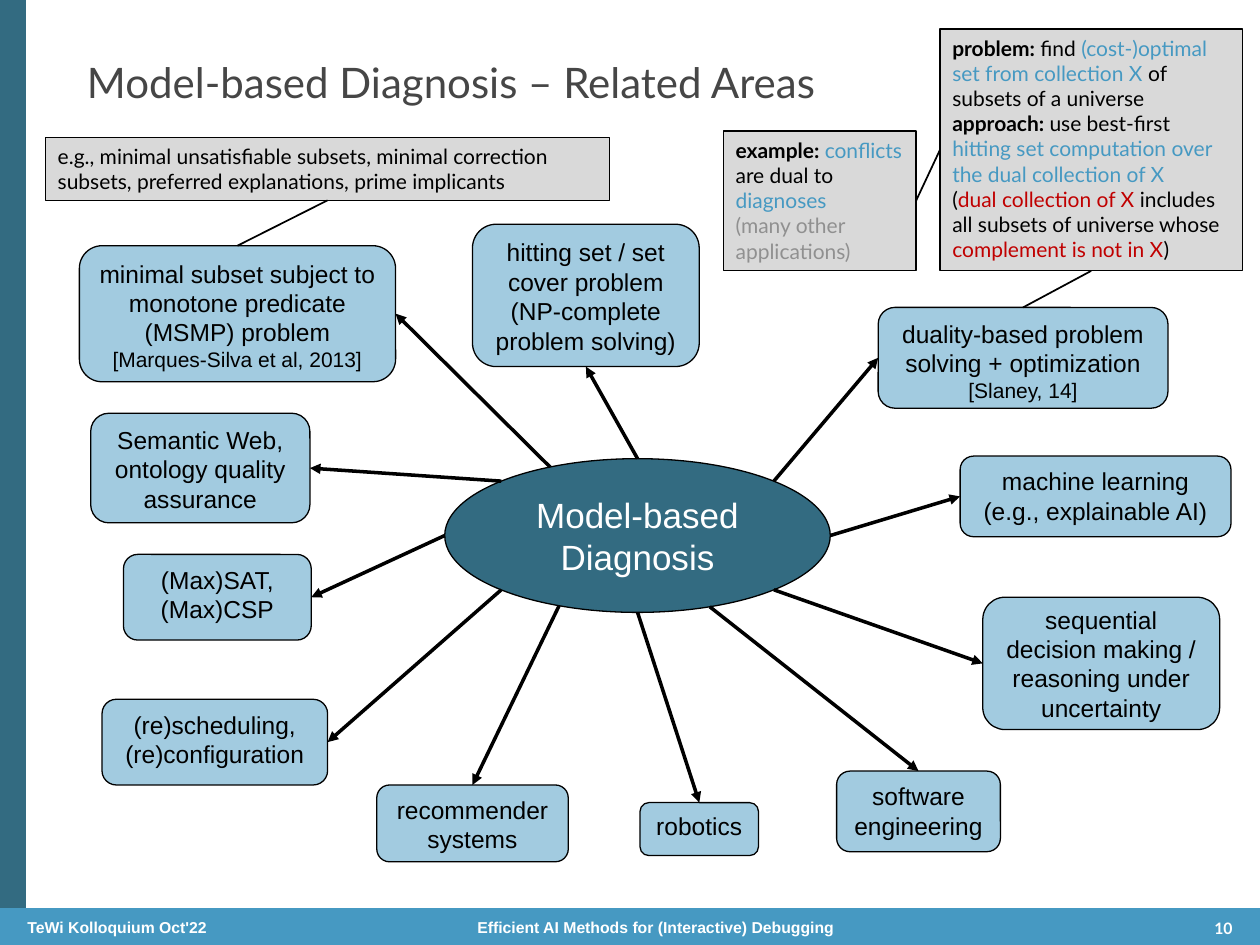
"""Build the slide on areas related to model-based diagnosis."""
import math

import lxml.etree
import pptx
import pptx.dml.color
import pptx.enum.shapes
import pptx.enum.text
import pptx.oxml.ns
import pptx.util

Inches = pptx.util.Inches
Pt = pptx.util.Pt
SHAPE = pptx.enum.shapes.MSO_SHAPE
ALIGN = pptx.enum.text.PP_ALIGN
ANCHOR = pptx.enum.text.MSO_ANCHOR
TOP, LEFT, BOTTOM, RIGHT = range(4)

BLACK, WHITE, GREY = "000000", "FFFFFF", "D9D9D9"
TEAL, BLUE, RED = "336B81", "4699C2", "C00000"
CITATION = {"size": 12}
BOLD = {"bold": True}
KEY = {"color": BLUE}
DUAL = {"color": RED}

TITLE = "Model-based Diagnosis – Related Areas"
FOOTER = "TeWi Kolloquium Oct'22\tEfficient AI Methods for (Interactive) Debugging"
FOOTER_TAB = 3.57
PAGE = "10"
HUB = (3.53, 3.64, 3.06, 1.22)
BARS = [((0, 0, 0.2, 7.5), TEAL), ((0, 7.21, 10, 0.29), BLUE)]

# name: (box, paragraphs, side joined, angle on the hub in degrees)
AREAS = {
    "subsets": ((0.63, 1.95, 2.51, 1.08),
                [["minimal subset subject to monotone predicate (MSMP) problem ",
                  ("[Marques-Silva et al, 2013]", CITATION)]], RIGHT, 243),
    "hitting": ((3.75, 1.78, 1.8, 1.13),
                [["hitting set / set cover problem"],
                 ["(NP-complete problem solving)"]], BOTTOM, 270),
    "web": ((0.72, 3.28, 1.74, 0.87),
            [["Semantic Web,"], ["ontology quality assurance"]], RIGHT, 225),
    "duality": ((6.97, 2.44, 2.3, 0.8),
                [["duality-based problem solving + optimization ",
                  ("[Slaney, 14]", CITATION)]], LEFT, 315),
    "sequential": ((7.8, 4.74, 1.88, 1.05),
                   [["sequential decision making / reasoning under uncertainty"]],
                   LEFT, 45),
    "learning": ((7.62, 3.62, 2.15, 0.64),
                 [["machine learning"], ["(e.g., explainable AI)"]], LEFT, 0),
    "sat": ((0.98, 4.4, 1.49, 0.68), [["(Max)SAT,"], ["(Max)CSP"]], RIGHT, 180),
    "scheduling": ((0.81, 5.55, 1.79, 0.68),
                   [["(re)scheduling,"], ["(re)configuration"]], RIGHT, 135),
    "recommender": ((2.99, 6.23, 1.52, 0.61), [["recommender systems"]], TOP, 114),
    "robotics": ((5.08, 6.37, 0.94, 0.42), [["robotics"]], TOP, 90),
    "software": ((6.64, 6.12, 1.3, 0.64), [["software engineering"]], TOP, 68),
}

NOTES = {
    "subset examples": ((0.36, 1.09, 4.48, 0.5), [[
        "e.g., minimal unsatisfiable subsets, minimal correction subsets, "
        "preferred explanations, prime implicants"]]),
    "problem": ((7.46, 0.23, 2.4, 1.92), [
        [("problem:", BOLD), " find ",
         ("(cost-)optimal set from collection X ", KEY), "of subsets of a universe"],
        [("approach: ", BOLD), "use best-first ",
         ("hitting set computation over the dual collection of X", KEY)],
        ["(", ("dual collection of X ", DUAL),
         "includes all subsets of universe whose ",
         ("complement is not in X", DUAL), ")"]]),
    "example": ((5.74, 1.04, 1.53, 1.11), [
        [("example: ", BOLD), ("conflicts ", KEY), "are dual to ", ("diagnoses", KEY)],
        [("(many other applications)", {"color": "909090"})]]),
}

NOTE_LINKS = [("subsets", TOP, "subset examples", BOTTOM),
              ("duality", TOP, "problem", BOTTOM),
              ("problem", LEFT, "example", RIGHT)]


def rgb(value):
    """Turn a hex string into a colour."""
    return pptx.dml.color.RGBColor.from_string(value)


def inches(box):
    """Turn a tuple of numbers into lengths."""
    return [Inches(value) for value in box]


def add_xml(parent, tag, **attributes):
    """Append a drawing element and return it."""
    return lxml.etree.SubElement(parent, pptx.oxml.ns.qn(tag), **attributes)


def write(holder, paragraphs, size=14, font="Arial", color=BLACK, bold=False,
          align=ALIGN.LEFT, anchor=ANCHOR.TOP):
    """Fill a shape with paragraphs of runs, each a string or (string, format)."""
    frame = holder.text_frame
    frame.word_wrap = True
    frame.vertical_anchor = anchor
    for index, runs in enumerate(paragraphs):
        paragraph = frame.add_paragraph() if index else frame.paragraphs[0]
        paragraph.alignment = align
        for item in runs:
            wording, changes = (item, {}) if isinstance(item, str) else item
            style = {"size": size, "color": color, "bold": bold, **changes}
            run = paragraph.add_run()
            run.text = wording
            run.font.name = font
            run.font.size = Pt(style["size"])
            run.font.bold = style["bold"]
            run.font.color.rgb = rgb(style["color"])


def draw(slide, kind, box, fill, line=BLACK, opacity=None):
    """Add a filled, outlined shape without shadow."""
    shape = slide.shapes.add_shape(kind, *inches(box))
    shape.shadow.inherit = False
    shape.fill.solid()
    shape.fill.fore_color.rgb = rgb(fill)
    shape.line.color.rgb = rgb(line)
    shape.line.width = Pt(0.75)
    if opacity:
        tint = shape.fill._xPr.find(".//" + pptx.oxml.ns.qn("a:srgbClr"))
        add_xml(tint, "a:alpha", val=str(opacity * 1000))
    return shape


def connect(slide, start, start_side, end=(0, 0), width=1.0, arrow=False):
    """Join a shape's side to a point or to another shape's (shape, side)."""
    link = slide.shapes.add_connector(
        pptx.enum.shapes.MSO_CONNECTOR.STRAIGHT, 0, 0, 0, 0)
    link.begin_connect(start, start_side)
    if isinstance(end[0], float):
        link.end_x, link.end_y = inches(end)
    else:
        link.end_connect(*end)
    link.line.color.rgb = rgb(BLACK)
    link.line.width = Pt(width)
    if arrow:
        add_xml(link.line._get_or_add_ln(), "a:headEnd", type="triangle")
    add_xml(link._element.spPr, "a:effectLst")


def hub_point(degrees):
    """Return the point of the hub's outline at a clockwise angle."""
    left, top, width, height = HUB
    angle = math.radians(degrees)
    return (left + width / 2 * (1 + math.cos(angle)),
            top + height / 2 * (1 + math.sin(angle)))


def main():
    """Build and save the slide."""
    deck = pptx.Presentation()
    deck.slide_width, deck.slide_height = Inches(10), Inches(7.5)
    slide = deck.slides.add_slide(deck.slide_layouts[5])

    for box, color in BARS:
        draw(slide, SHAPE.RECTANGLE, box, color, line=color)

    title = slide.shapes.title
    title.left, title.top, title.width, title.height = inches((0.59, 0.29, 6.93, 0.71))
    write(title, [[TITLE]], size=24, font="Lato", color="464646", anchor=ANCHOR.MIDDLE)

    page = slide.shapes.add_textbox(*inches((9.09, 7.17, 0.79, 0.4)))
    write(page, [[PAGE]], size=9, font="Lato", color=WHITE, bold=True,
          align=ALIGN.RIGHT, anchor=ANCHOR.MIDDLE)
    footer = slide.shapes.add_textbox(*inches((0.12, 7.16, 7.34, 0.4)))
    properties = footer.text_frame.paragraphs[0]._p.get_or_add_pPr()
    add_xml(add_xml(properties, "a:tabLst"), "a:tab",
            pos=str(Inches(FOOTER_TAB)), algn="l")
    write(footer, [[FOOTER]], size=9, color=WHITE, bold=True, anchor=ANCHOR.MIDDLE)

    hub = draw(slide, SHAPE.OVAL, HUB, TEAL)
    write(hub, [["Model-based Diagnosis"]], size=20, color=WHITE,
          align=ALIGN.CENTER, anchor=ANCHOR.MIDDLE)

    drawn = {}
    for name, (box, paragraphs, side, angle) in AREAS.items():
        area = drawn[name] = draw(slide, SHAPE.ROUNDED_RECTANGLE, box, BLUE, opacity=50)
        write(area, paragraphs, align=ALIGN.CENTER,
              anchor=ANCHOR.MIDDLE if name == "sequential" else ANCHOR.TOP)
        connect(slide, area, side, hub_point(angle), width=2, arrow=True)

    for name, (box, paragraphs) in NOTES.items():
        note = drawn[name] = draw(slide, SHAPE.RECTANGLE, box, GREY)
        write(note, paragraphs, size=12, font="Lato")
        note.text_frame.auto_size = pptx.enum.text.MSO_AUTO_SIZE.SHAPE_TO_FIT_TEXT

    for start, start_side, end, end_side in NOTE_LINKS:
        connect(slide, drawn[start], start_side, (drawn[end], end_side))

    deck.save("out.pptx")


if __name__ == "__main__":
    main()
